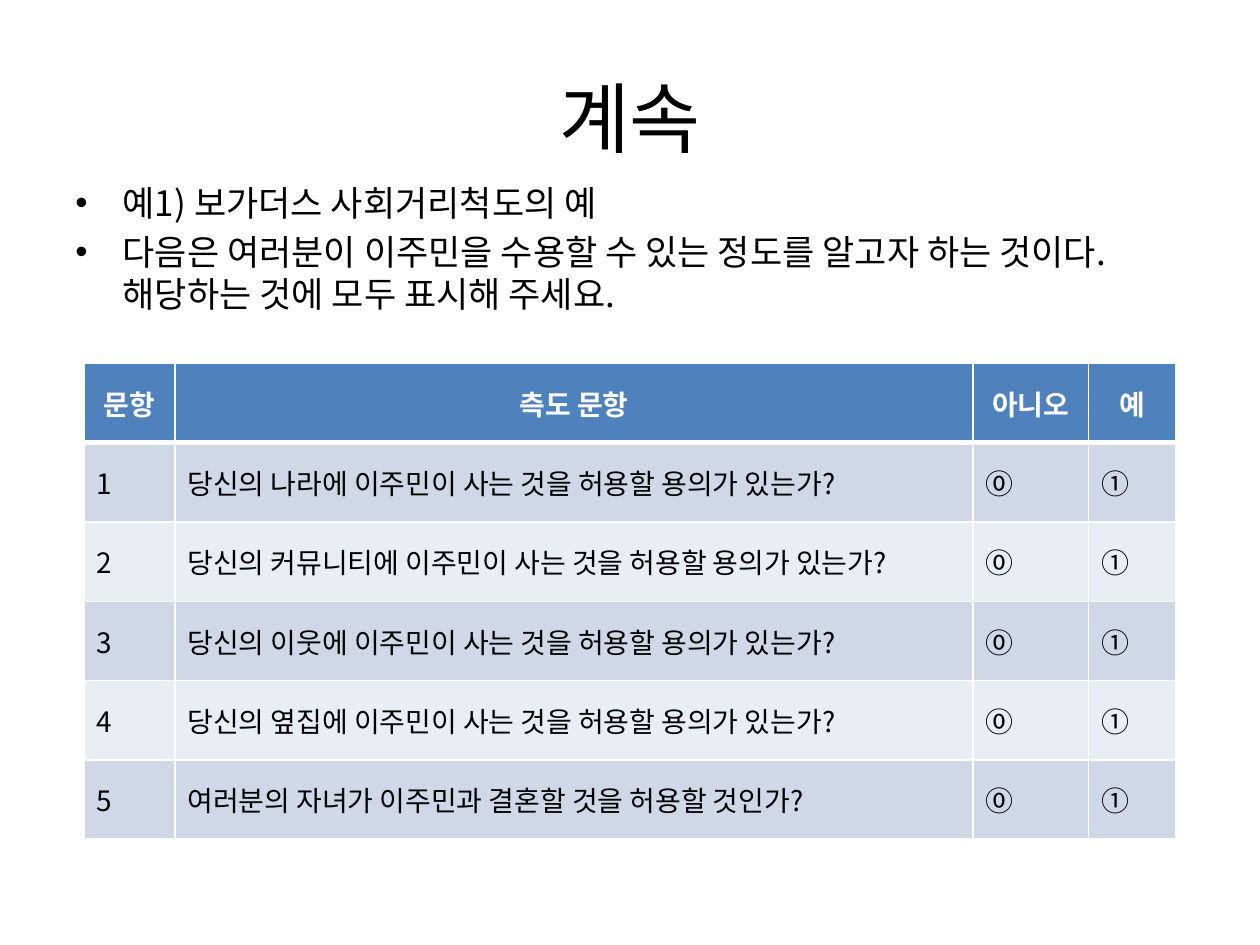
from lxml import etree
from pptx import Presentation
from pptx.dml.color import RGBColor
from pptx.enum import text
from pptx.oxml import ns
from pptx.util import Pt

FONT = "Noto Sans CJK KR"
BULLETS = [
    "예1) 보가더스 사회거리척도의 예",
    "다음은 여러분이 이주민을 수용할 수 있는 정도를 알고자 하는 것이다. 해당하는 것에 모두 표시해 주세요.",
]
HEADINGS = ["문항", "측도 문항", "아니오", "예"]
QUESTIONS = [
    "당신의 나라에 이주민이 사는 것을 허용할 용의가 있는가?",
    "당신의 커뮤니티에 이주민이 사는 것을 허용할 용의가 있는가?",
    "당신의 이웃에 이주민이 사는 것을 허용할 용의가 있는가?",
    "당신의 옆집에 이주민이 사는 것을 허용할 용의가 있는가?",
    "여러분의 자녀가 이주민과 결혼할 것을 허용할 것인가?",
]
COLUMN_WIDTHS = [52, 456, 66, 50]


def color(value):
    """Turn a hex string into a colour."""
    return RGBColor.from_string(value)


def assign(target, values):
    """Set each attribute named in values."""
    for name, value in values.items():
        setattr(target, name, value)


def add_child(parent, tag, **attributes):
    """Append a drawing element with the given attributes."""
    return etree.SubElement(parent, ns.qn(tag), attributes)


def write(para, words, size, ink="000000", bold=False, align=text.PP_ALIGN.LEFT):
    """Put one formatted run into a paragraph."""
    para.alignment = align
    span = para.add_run()
    span.text = words
    assign(span.font, {"name": FONT, "size": Pt(size), "bold": bold})
    span.font.color.rgb = color(ink)
    add_child(span.font._element, "a:ea", typeface=FONT)


def place_title(page, left, top, width, height):
    """Place the centred slide title."""
    title = page.shapes.title
    assign(title, {"left": Pt(left), "top": Pt(top), "width": Pt(width), "height": Pt(height)})
    title.text_frame.vertical_anchor = text.MSO_ANCHOR.MIDDLE
    write(title.text_frame.paragraphs[0], "계속", 44, align=text.PP_ALIGN.CENTER)


def place_bullets(page, left, top, width, height):
    """Place the bulleted introduction."""
    box = page.shapes.add_textbox(Pt(left), Pt(top), Pt(width), Pt(height))
    frame = box.text_frame
    frame.word_wrap = True
    for index, words in enumerate(BULLETS):
        para = frame.add_paragraph() if index else frame.paragraphs[0]
        write(para, words, 20)
        assign(para, {"line_spacing": 1.0, "space_before": Pt(4)})
        settings = para._p.get_or_add_pPr()
        settings.set("marL", str(Pt(27)))
        settings.set("indent", str(Pt(-27)))
        add_child(settings, "a:buFont", typeface="Arial")
        add_child(settings, "a:buChar", char="•")


def draw_borders(cell, top, bottom):
    """Give a cell white borders, with top and bottom widths in points."""
    settings = cell._tc.get_or_add_tcPr()
    for side, width in {"L": 1, "R": 1, "T": top, "B": bottom}.items():
        line = add_child(settings, f"a:ln{side}", w=str(Pt(width)))
        add_child(add_child(line, "a:solidFill"), "a:srgbClr", val="FFFFFF")


def place_table(page, left, top, width, height):
    """Place the social distance scale."""
    rows = [HEADINGS]
    rows += [[str(number), question, "⓪", "①"] for number, question in enumerate(QUESTIONS, 1)]
    frame = page.shapes.add_table(
        len(rows), len(HEADINGS), Pt(left), Pt(top), Pt(width), Pt(height))
    table = frame.table
    for column, share in zip(table.columns, COLUMN_WIDTHS):
        column.width = Pt(width * share / sum(COLUMN_WIDTHS))
    for index, row in enumerate(rows):
        header = index == 0
        fill = "4F81BD" if header else "D0D8E8" if index % 2 else "E9EDF4"
        style = {"ink": "FFFFFF", "bold": True, "align": text.PP_ALIGN.CENTER} if header else {}
        for column, words in enumerate(row):
            cell = table.cell(index, column)
            draw_borders(cell, 3 if index == 1 else 1, 3 if header else 1)
            cell.fill.solid()
            cell.fill.fore_color.rgb = color(fill)
            cell.vertical_anchor = text.MSO_ANCHOR.MIDDLE
            write(cell.text_frame.paragraphs[0], words, 16, **style)


def main():
    """Build and save the slide."""
    deck = Presentation()
    assign(deck, {"slide_width": Pt(720), "slide_height": Pt(540)})
    page = deck.slides.add_slide(deck.slide_layouts[5])
    place_title(page, 36, 21.6, 648, 90)
    place_bullets(page, 36, 100, 648, 382)
    place_table(page, 48, 207.6, 624, 272)
    deck.save("out.pptx")


if __name__ == "__main__":
    main()
